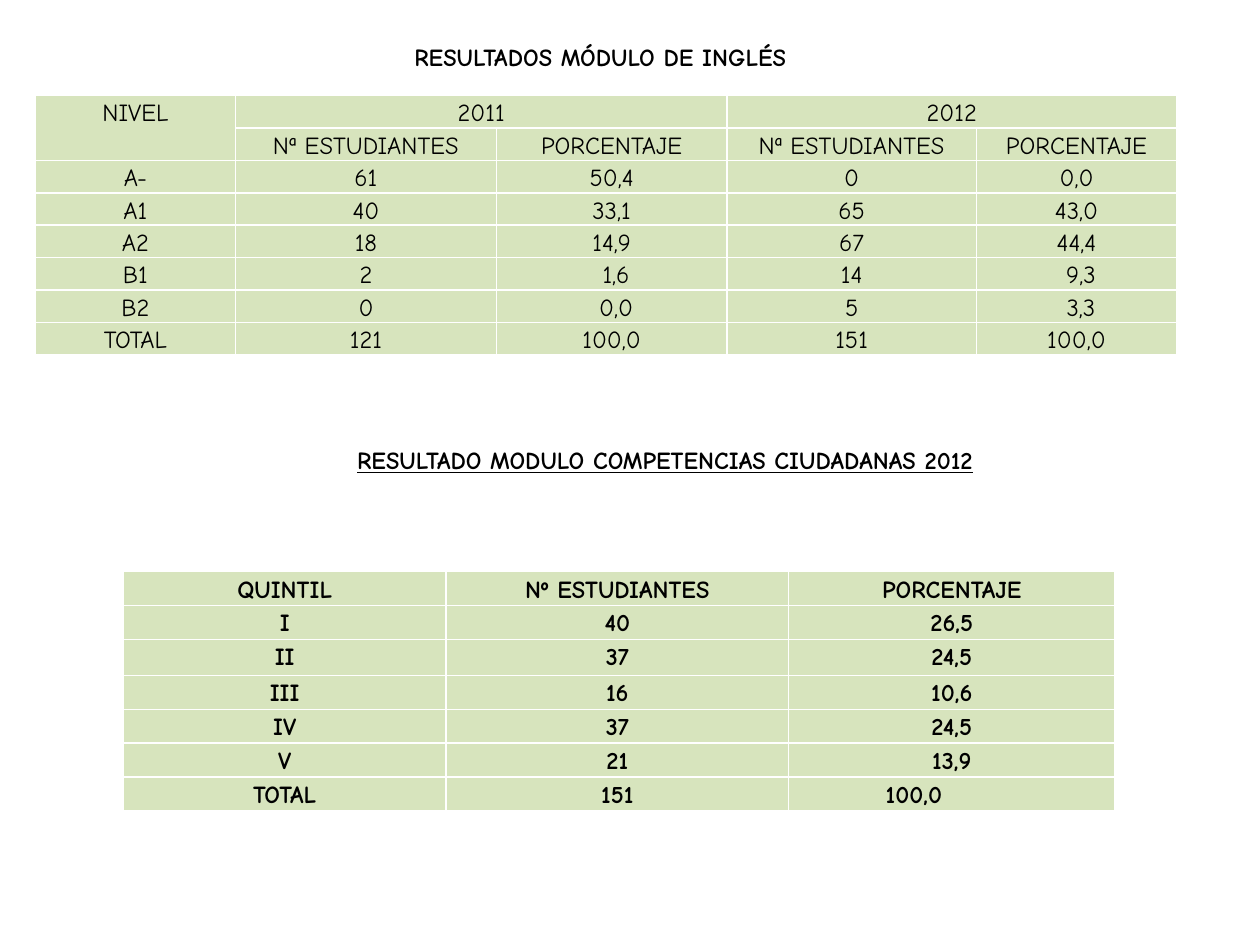
from dataclasses import dataclass

from lxml.etree import SubElement
from pptx import Presentation
from pptx.dml.color import RGBColor
from pptx.enum.text import MSO_ANCHOR, MSO_AUTO_SIZE, PP_ALIGN
from pptx.oxml.ns import qn
from pptx.util import Inches, Pt


@dataclass(frozen=True)
class Theme:
    font: str = "Comic Neue"
    size: int = 14
    ink: str = "000000"
    fill: str = "D7E4BD"
    line: str = "FFFFFF"
    inset: float = 0.07


THEME = Theme()
WIDE, HIGH = Inches(10), Inches(7.5)

LEVELS = [
    ["NIVEL", "2011", "", "2012", ""],
    ["", "Nª ESTUDIANTES", "PORCENTAJE", "Nª ESTUDIANTES", "PORCENTAJE"],
    ["A-", "61", "50,4", "0", "0,0"],
    ["A1", "40", "33,1", "65", "43,0"],
    ["A2", "18", "14,9", "67", "44,4"],
    ["B1", "2", "1,6", "14", "9,3"],
    ["B2", "0", "0,0", "5", "3,3"],
    ["TOTAL", "121", "100,0", "151", "100,0"],
]
QUINTILES = [
    ["QUINTIL", "Nº ESTUDIANTES", "PORCENTAJE"],
    ["I", "40", "26,5"],
    ["II", "37", "24,5"],
    ["III", "16", "10,6"],
    ["IV", "37", "24,5"],
    ["V", "21", "13,9"],
    ["TOTAL", "151", "100,0"],
]


def scale(box):
    """Turn shares of the slide into lengths."""
    return [round(part * side) for part, side in zip(box, (WIDE, HIGH) * 2)]


def add_run(para, text, bold, under=False):
    run = para.add_run()
    run.text = text
    font = run.font
    font.name, font.size = THEME.font, Pt(THEME.size)
    font.bold, font.underline = bold, under
    font.color.rgb = RGBColor.from_string(THEME.ink)


def add_head(shape, box, text, under=False):
    shape.left, shape.top, shape.width, shape.height = scale(box)
    frame = shape.text_frame
    frame.word_wrap = True
    frame.auto_size = MSO_AUTO_SIZE.NONE
    frame.vertical_anchor = MSO_ANCHOR.MIDDLE
    frame.margin_left = frame.margin_right = Inches(0.1)
    frame.margin_top, frame.margin_bottom = Inches(0.05), Inches(0.35)
    para = frame.paragraphs[0]
    para.alignment = PP_ALIGN.CENTER
    add_run(para, text, True, under)


def add_edges(cell):
    props = cell._tc.get_or_add_tcPr()
    for spot, side in enumerate("LRTB"):
        edge = SubElement(props, qn(f"a:ln{side}"), w=str(Pt(1)))
        paint = SubElement(edge, qn("a:solidFill"))
        SubElement(paint, qn("a:srgbClr"), val=THEME.line)
        props.insert(spot, edge)


def fill_cell(cell, text, bold):
    cell.fill.solid()
    cell.fill.fore_color.rgb = RGBColor.from_string(THEME.fill)
    cell.margin_left = cell.margin_right = Inches(THEME.inset)
    cell.margin_top = cell.margin_bottom = 0
    add_edges(cell)
    para = cell.text_frame.paragraphs[0]
    para.alignment, para.line_spacing = PP_ALIGN.CENTER, 1.15
    if text:
        add_run(para, text, bold)


def add_grid(slide, box, data, cols, rows, bold=False):
    """Place a table whose columns and rows share the box by weight."""
    left, top, width, height = scale(box)
    table = slide.shapes.add_table(
        len(data), len(cols), left, top, width, height).table
    table.first_row = table.horz_banding = False
    for col, part in zip(table.columns, cols):
        col.width = round(width * part / sum(cols))
    for row, part in zip(table.rows, rows):
        row.height = round(height * part / sum(rows))
    for r, line in enumerate(data):
        for c, text in enumerate(line):
            fill_cell(table.cell(r, c), text, bold)
    return table


def add_english(slide, box):
    table = add_grid(slide, box, LEVELS, [1.59, 2.07, 1.83, 1.98, 1.59], [1] * 8)
    # Level spans two rows, each year spans two columns
    for start, end in [((0, 0), (1, 0)), ((0, 1), (0, 2)), ((0, 3), (0, 4))]:
        table.cell(*start).merge(table.cell(*end))
    # Short figures sit slightly to the right
    for spot in [(5, 2), (5, 4), (6, 2), (6, 4)]:
        table.cell(*spot).margin_left = Inches(THEME.inset * 2)


def add_civics(slide, box):
    rows = [0.27, 0.27, 0.29, 0.27, 0.27, 0.27, 0.27]
    table = add_grid(slide, box, QUINTILES, [2.56, 2.72, 2.59], rows, True)
    # The last total is indented from the left
    total = table.cell(6, 2)
    total.margin_left = Inches(0.77)
    total.text_frame.paragraphs[0].alignment = PP_ALIGN.LEFT


def main():
    deck = Presentation()
    deck.slide_width, deck.slide_height = WIDE, HIGH
    slide = deck.slides.add_slide(deck.slide_layouts[5])

    # English module
    add_head(slide.shapes.title, (0.264, 0.037, 0.425, 0.085),
             "RESULTADOS MÓDULO DE INGLÉS")
    add_english(slide, (0.028, 0.101, 0.906, 0.274))

    # Civic skills module
    label = slide.shapes.add_textbox(0, 0, 0, 0)
    add_head(label, (0.256, 0.448, 0.544, 0.117),
             "RESULTADO MODULO COMPETENCIAS CIUDADANAS 2012", True)
    add_civics(slide, (0.098, 0.605, 0.787, 0.253))

    deck.save("out.pptx")


if __name__ == "__main__":
    main()
